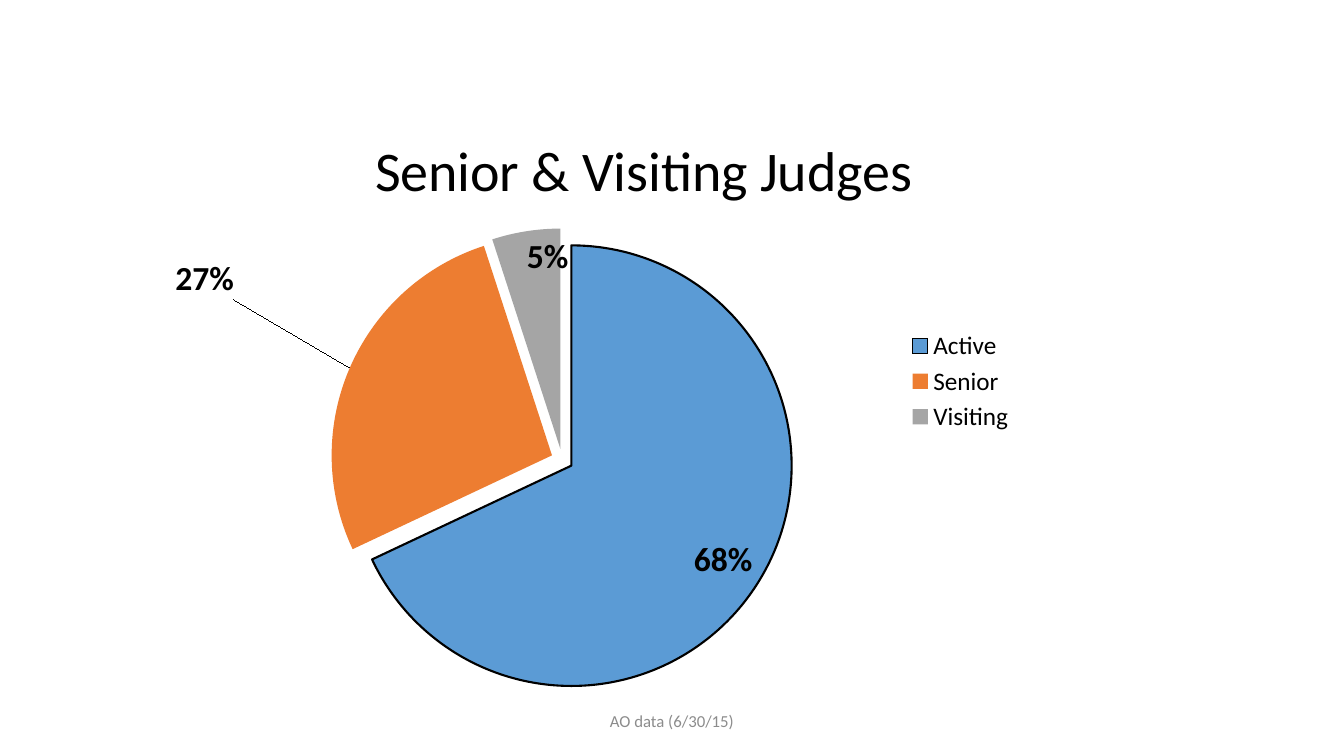
from lxml.etree import SubElement
from pptx import Presentation
from pptx.chart.data import CategoryChartData
from pptx.dml.color import RGBColor
from pptx.enum.chart import XL_CHART_TYPE as ChartType
from pptx.enum.chart import XL_LABEL_POSITION as LabelPosition
from pptx.enum.chart import XL_LEGEND_POSITION as LegendPosition
from pptx.enum.text import MSO_ANCHOR as Anchor
from pptx.enum.text import PP_ALIGN as Align
from pptx.oxml.ns import qn
from pptx.util import Pt

BLACK = RGBColor(0x00, 0x00, 0x00)
GRAY = RGBColor(0x8C, 0x8C, 0x8C)
BLUE = RGBColor(0x5B, 0x9B, 0xD5)
ORANGE = RGBColor(0xED, 0x7D, 0x31)
SILVER = RGBColor(0xA5, 0xA5, 0xA5)
FONT = "Calibri"
TITLE = "Senior & Visiting Judges"


def write_text(frame, text, size, color, align=Align.CENTER):
    para = frame.paragraphs[0]
    para.alignment = align
    span = para.add_run()
    span.text = text
    span.font.name = FONT
    span.font.size = Pt(size)
    span.font.bold = False
    span.font.color.rgb = color


def place(parent, index, **settings):
    for old in parent.findall(qn("c:layout")):
        parent.remove(old)
    layout = SubElement(parent, qn("c:layout"))
    manual = SubElement(layout, qn("c:manualLayout"))
    for name, value in settings.items():
        SubElement(manual, qn(f"c:{name}")).set("val", str(value))
    parent.insert(index, layout)


deck = Presentation()
deck.slide_width, deck.slide_height = Pt(960), Pt(540)
page = deck.slides.add_slide(deck.slide_layouts[6])

judges = CategoryChartData()
judges.categories = ["Active", "Senior", "Visiting"]
judges.add_series(TITLE, (68, 27, 5))
chart = page.shapes.add_chart(
    ChartType.PIE, Pt(120), Pt(36), Pt(612), Pt(468), judges
).chart
chart.font.name = FONT
chart.font.size = Pt(18)
chart.font.color.rgb = BLACK

chart.has_title = True
title = chart.chart_title
write_text(title.text_frame, TITLE, size=40, color=BLACK)
title.include_in_layout = False
place(title._element, 1, xMode="edge", yMode="edge", x=0.23, y=0.11)

chart.has_legend = True
legend = chart.legend
legend.position = LegendPosition.RIGHT
legend.include_in_layout = False
place(legend._element, 1, xMode="edge", yMode="edge", x=0.86, y=0.42, w=0.13, h=0.17)

plot = chart.plots[0]
plot.vary_by_categories = True
place(plot._element.getparent(), 0, layoutTarget="inner", xMode="edge", yMode="edge",
      x=0.19, y=0.27, w=0.54, h=0.71)

series = plot.series[0]
explosion = SubElement(series._element, qn("c:explosion"))
explosion.set("val", "5")
series._element.find(qn("c:tx")).addnext(explosion)
for number, color in enumerate((BLUE, ORANGE, SILVER)):
    fill = series.points[number].format.fill
    fill.solid()
    fill.fore_color.rgb = color
active_line = series.points[0].format.line
active_line.color.rgb = BLACK
active_line.width = Pt(1.5)

labels = series.data_labels
labels.show_value = False
labels.show_percentage = True
labels.number_format = "0%"
labels.number_format_is_linked = False
senior_label = series.points[1].data_label
for label in (labels, senior_label):
    label.position = LabelPosition.INSIDE_END
    label.font.name = FONT
    label.font.size = Pt(24)
    label.font.bold = True
    label.font.color.rgb = BLACK
senior = labels._element.find(qn("c:dLbl"))
senior.find(qn("c:showVal")).set("val", "0")
senior.find(qn("c:showPercent")).set("val", "1")
place(senior, 1, x=-0.21, y=-0.17)

footer = page.shapes.add_textbox(Pt(318), Pt(500.4), Pt(324), Pt(28.8)).text_frame
footer.word_wrap = True
footer.vertical_anchor = Anchor.MIDDLE
write_text(footer, "AO data (6/30/15)", size=12, color=GRAY)

deck.save("out.pptx")
